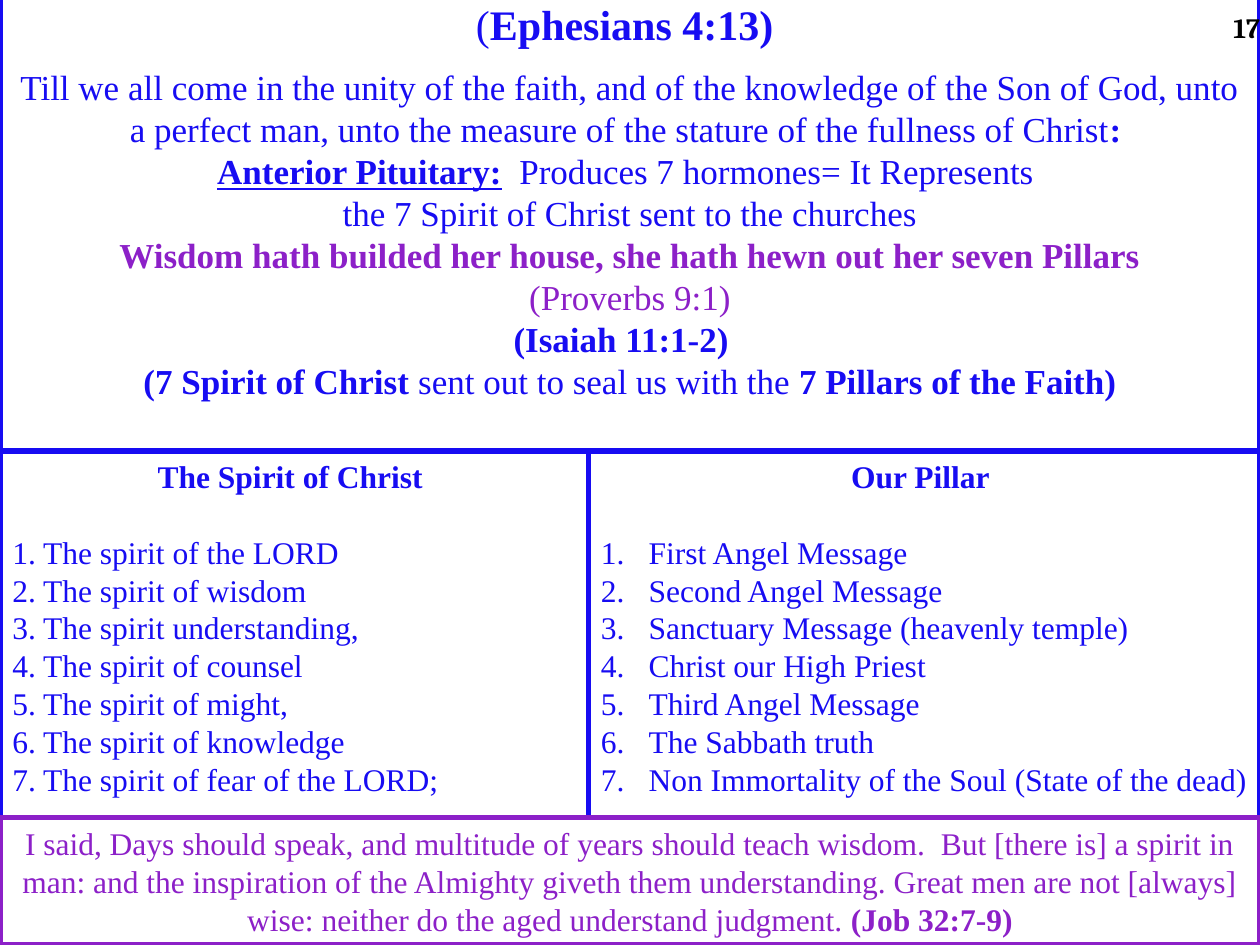
import dataclasses

import lxml.etree
import pptx
import pptx.dml.color
import pptx.enum.shapes
import pptx.enum.text
import pptx.oxml.ns
import pptx.util

Inches = pptx.util.Inches
Pt = pptx.util.Pt
Align = pptx.enum.text.PP_ALIGN
Anchor = pptx.enum.text.MSO_ANCHOR


@dataclasses.dataclass(frozen=True)
class Theme:
    blue: str = "170CF2"
    plum: str = "8C20C8"
    white: str = "FFFFFF"
    black: str = "000000"
    serif: str = "Times New Roman"
    folio: str = "Cambria"
    title: int = 24
    verse: int = 20
    list: int = 18
    page: int = 16
    line: int = 3


theme = Theme()
color = pptx.dml.color.RGBColor.from_string


def add_box(left, top, width, height, line):
    """Add a white framed box and return its text frame."""
    box = slide.shapes.add_shape(
        pptx.enum.shapes.MSO_SHAPE.RECTANGLE,
        Inches(left), Inches(top), Inches(width), Inches(height))
    box.shadow.inherit = False
    box.fill.solid()
    box.fill.fore_color.rgb = color(theme.white)
    box.line.color.rgb = color(line)
    box.line.width = Pt(theme.line)
    frame = box.text_frame
    frame.word_wrap = True
    frame.vertical_anchor = Anchor.TOP
    return frame


def add_para(frame, runs, size, tint, align=Align.CENTER, font=theme.serif):
    """Write (text, style) runs; style holds b for bold, u for underline."""
    para = frame.paragraphs[0]
    if para.runs:
        para = frame.add_paragraph()
    para.alignment = align
    for text, style in runs:
        run = para.add_run()
        run.text = text
        run.font.name = font
        run.font.size = Pt(size)
        run.font.color.rgb = color(tint)
        run.font.bold = "b" in style
        run.font.underline = "u" in style
    return para


deck = pptx.Presentation()
deck.slide_width = Inches(10)
deck.slide_height = Inches(7.5)
slide = deck.slides.add_slide(deck.slide_layouts[6])
slide.background.fill.solid()
slide.background.fill.fore_color.rgb = color(theme.black)

# Verses at the top
frame = add_box(0, -0.08, 10, 3.67, theme.blue)
frame.vertical_anchor = Anchor.MIDDLE
frame.margin_bottom = Inches(0.38)
head = add_para(frame, [("(", ""), ("Ephesians 4:13) ", "b")],
                theme.title, theme.blue)
head.space_after = Pt(9.6)
verses = [
    (theme.blue, [("Till we all come in the unity of the faith, and of the "
                   "knowledge of the Son of God, unto a perfect man, unto the "
                   "measure of the stature of the fullness of Christ", ""),
                  (": ", "b")]),
    (theme.blue, [("Anterior Pituitary:", "bu"),
                  ("  Produces 7 hormones= It Represents ", "")]),
    (theme.blue, [("the 7 Spirit of Christ sent to the churches", "")]),
    (theme.plum, [("Wisdom hath builded her house, she hath hewn out her "
                   "seven Pillars", "b")]),
    (theme.plum, [("(Proverbs 9:1)", "")]),
    (theme.blue, [("(Isaiah 11:1-2)  ", "b")]),
    (theme.blue, [("(7 Spirit of Christ ", "b"),
                  ("sent out to seal us with the ", ""),
                  ("7 Pillars of the Faith)", "b")]),
]
for tint, runs in verses:
    add_para(frame, runs, theme.verse, tint)

# Two lists side by side
split, top, height = 4.67, 3.58, 2.91
lists = [
    (0, split, "The Spirit of Christ ", False,
     ["1. The spirit of the LORD", "2. The spirit of wisdom",
      "3. The spirit understanding,", "4. The spirit of counsel",
      "5. The spirit of might,", "6. The spirit of knowledge",
      "7. The spirit of fear of the LORD;"]),
    (split, 10 - split, "Our Pillar ", True,
     ["First Angel Message", "Second Angel Message",
      "Sanctuary Message (heavenly temple)", "Christ our High Priest",
      "Third Angel Message", "The Sabbath truth",
      "Non Immortality of the Soul (State of the dead)"]),
]
for left, width, label, auto, items in lists:
    frame = add_box(left, top, width, height, theme.blue)
    paras = [add_para(frame, [(label, "b")], theme.list, theme.blue)]
    paras[0].space_after = Pt(21.6)
    for item in items:
        paras.append(add_para(frame, [(item, "")], theme.list, theme.blue,
                              Align.LEFT))
    if auto:
        # Hanging indent for all, numbers for the items only
        for para in paras:
            props = para._p.get_or_add_pPr()
            props.set("marL", str(Inches(0.38)))
            props.set("indent", str(Inches(-0.38)))
            if para is not paras[0]:
                mark = lxml.etree.SubElement(
                    props, pptx.oxml.ns.qn("a:buAutoNum"))
                mark.set("type", "arabicPeriod")

# Closing verse
frame = add_box(0, top + height, 10, 1.01, theme.plum)
add_para(frame, [("I said, Days should speak, and multitude of years should "
                  "teach wisdom.  But [there is] a spirit in man: and the "
                  "inspiration of the Almighty giveth them understanding. "
                  "Great men are not [always] wise: neither do the aged "
                  "understand judgment. ", ""), ("(Job 32:7-9)", "b")],
         theme.list, theme.plum)

# Page number
note = slide.shapes.add_textbox(Inches(9.67), 0, Inches(0.33), Inches(0.4))
frame = note.text_frame
frame.word_wrap = True
frame.vertical_anchor = Anchor.BOTTOM
frame.margin_left = frame.margin_right = 0
add_para(frame, [("17", "b")], theme.page, theme.black, Align.RIGHT,
         theme.folio)

deck.save("out.pptx")
